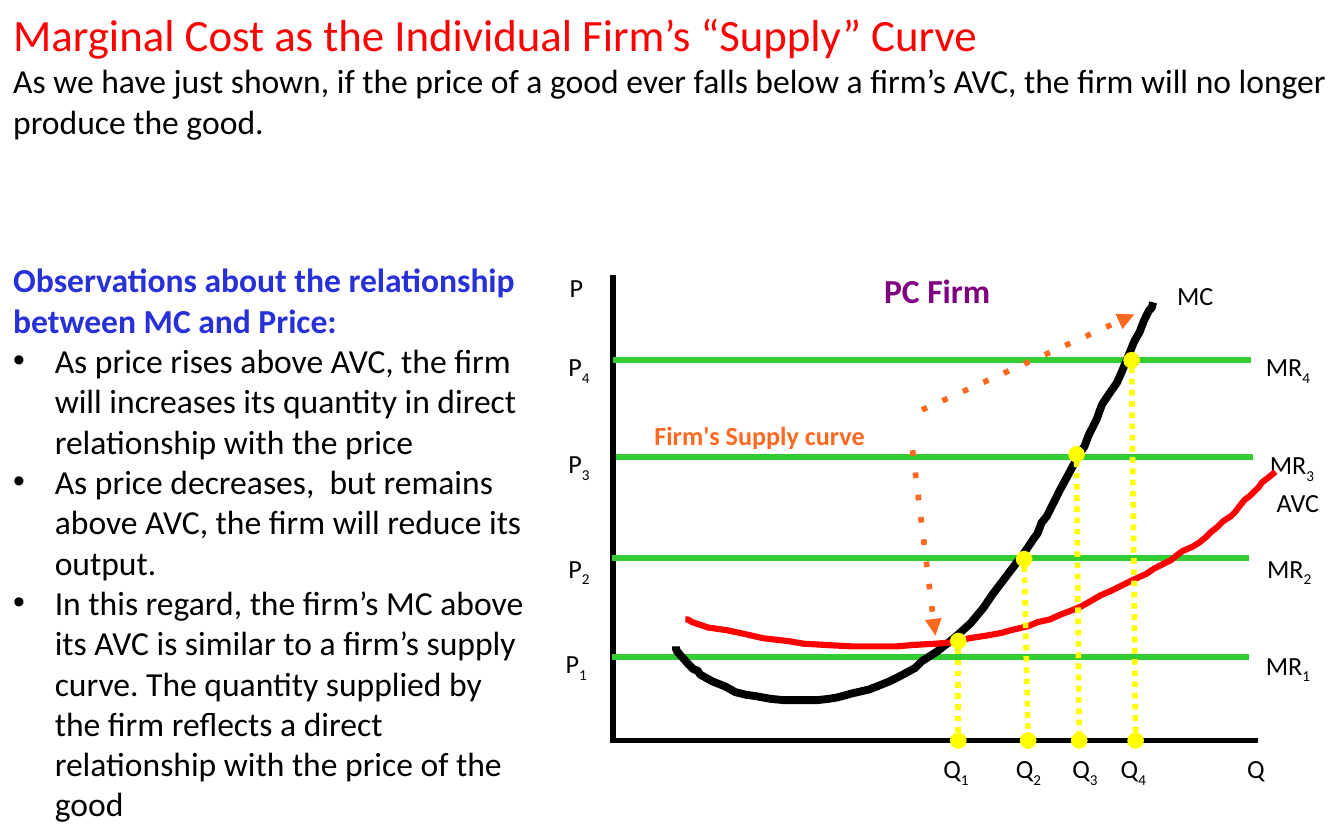
"""Build a slide showing marginal cost as a firm's supply curve."""
from typing import NamedTuple, Optional

from lxml import etree
from pptx import Presentation
from pptx import util as u
from pptx.dml.color import RGBColor
from pptx.enum import shapes, text
from pptx.oxml.ns import qn

BLACK = RGBColor(0x00, 0x00, 0x00)
RED = RGBColor(0xFF, 0x00, 0x00)
BLUE = RGBColor(0x28, 0x30, 0xD8)
PURPLE = RGBColor(0x80, 0x00, 0x80)
GREEN = RGBColor(0x32, 0xCD, 0x32)
ORANGE = RGBColor(0xFF, 0x68, 0x20)
YELLOW = RGBColor(0xFF, 0xFF, 0x00)
AXIS_Y = 5.51
INDENT = 0.31


class Para(NamedTuple):
    content: str
    size: float = 14
    color: RGBColor = BLACK
    bold: bool = False
    bullet: bool = False
    subscript: str = ""


class Label(NamedTuple):
    left: float
    top: float
    width: float
    para: Para


class Stroke(NamedTuple):
    start: tuple[float, float]
    end: tuple[float, float]
    color: RGBColor
    dash: Optional[str] = None
    head: Optional[str] = None
    tail: Optional[str] = None


class Curve(NamedTuple):
    color: RGBColor
    weight: float
    points: list[tuple[float, float]]


TITLE = [
    Para("Marginal Cost as the Individual Firm’s “Supply” Curve", 24, RED),
    Para("As we have just shown, if the price of a good ever falls below a firm’s AVC, "
         "the firm will no longer produce the good.", 18),
]
OBSERVATIONS = [
    Para("Observations about the relationship between MC and Price:", 18, BLUE, True),
    Para("As price rises above AVC, the firm will increases its quantity in direct "
         "relationship with the price", 18, bullet=True),
    Para("As price decreases,  but remains above AVC, the firm will reduce its output.",
         18, bullet=True),
    Para("In this regard, the firm’s MC above its AVC is similar to a firm’s supply curve. "
         "The quantity supplied by the firm reflects a direct relationship with the price "
         "of the good", 18, bullet=True),
]
PRICE_SPOTS = [(4.11, 4.77), (4.13, 4.06), (4.13, 3.28), (4.13, 2.56)]
REVENUE_SPOTS = [(9.32, 4.78), (9.33, 4.06), (9.35, 3.29), (9.32, 2.56)]
QUANTITY_SPOTS = [(left, 5.55) for left in (6.92, 7.46, 7.88, 8.24)]
SERIES = [("P", 0.55, PRICE_SPOTS), ("MR", 0.76, REVENUE_SPOTS), ("Q", 0.58, QUANTITY_SPOTS)]
LABELS = [
    Label(4.14, 1.97, 0.5, Para("P")),
    Label(9.18, 5.55, 0.58, Para("Q")),
    Label(6.48, 1.96, 1.56, Para("PC Firm", 18, PURPLE, True)),
    Label(8.66, 2.03, 0.66, Para("MC")),
    Label(9.4, 3.57, 0.79, Para("AVC")),
    Label(4.77, 3.07, 2.36, Para("Firm's Supply curve", 14, ORANGE, True)),
] + [
    Label(left, top, width, Para(name, subscript=str(number)))
    for name, width, spots in SERIES
    for number, (left, top) in enumerate(spots, 1)
]
AXES = [
    Stroke((4.56, AXIS_Y), (4.56, 2.05), BLACK),
    Stroke((4.54, AXIS_Y), (9.36, AXIS_Y), BLACK),
]
REVENUE_LINES = [
    Stroke((left, y), (right, y), GREEN)
    for left, right, y in [(4.55, 9.29, 4.89), (4.55, 9.29, 4.15),
                           (4.58, 9.32, 3.4), (4.56, 9.31, 2.68)]
]
SUPPLY_ARROWS = [
    Stroke((6.86, 3.05), (8.44, 2.34), ORANGE, "dot", tail="triangle"),
    Stroke((6.79, 3.35), (6.96, 4.73), ORANGE, "dot", tail="triangle"),
]
QUANTITY_DROPS = [
    Stroke((top_x, top_y), (foot_x, AXIS_Y), YELLOW, "sysDot", "oval", "oval")
    for top_x, top_y, foot_x in [(7.13, 4.77, 7.13), (7.62, 4.16, 7.65),
                                 (8.01, 3.38, 8.03), (8.42, 2.68, 8.45)]
]
MARGINAL_COST = Curve(BLACK, 4.23, [
    (5.03, 4.81), (5.03, 4.83), (5.04, 4.85), (5.12, 4.94), (5.16, 4.98), (5.19, 4.99),
    (5.21, 5.02), (5.3, 5.07), (5.4, 5.11), (5.47, 5.15), (5.55, 5.17), (5.62, 5.18),
    (5.73, 5.2), (5.83, 5.21), (6.08, 5.21), (6.17, 5.2), (6.23, 5.19), (6.34, 5.16),
    (6.47, 5.13), (6.52, 5.11), (6.62, 5.07), (6.7, 5.03), (6.81, 4.97), (6.86, 4.92),
    (6.97, 4.85), (7.06, 4.78), (7.12, 4.73), (7.22, 4.64), (7.32, 4.52), (7.38, 4.43),
    (7.57, 4.18), (7.61, 4.13), (7.69, 4.01), (7.72, 3.97), (7.75, 3.89), (7.79, 3.84),
    (7.84, 3.74), (7.89, 3.64), (7.95, 3.53), (8.03, 3.38), (8.07, 3.32), (8.1, 3.24),
    (8.16, 3.12), (8.2, 3.01), (8.26, 2.92), (8.31, 2.85), (8.35, 2.76), (8.44, 2.54),
    (8.48, 2.47), (8.51, 2.39), (8.55, 2.31), (8.57, 2.29), (8.58, 2.25),
])
AVERAGE_VARIABLE_COST = Curve(RED, 3.3, [
    (5.1, 4.61), (5.12, 4.61), (5.15, 4.63), (5.27, 4.67), (5.41, 4.69), (5.55, 4.72),
    (5.68, 4.75), (5.86, 4.77), (5.98, 4.79), (6.15, 4.8), (6.34, 4.81), (6.67, 4.81),
    (6.79, 4.8), (6.96, 4.79), (7.09, 4.78), (7.21, 4.75), (7.34, 4.73), (7.45, 4.71),
    (7.52, 4.69), (7.65, 4.66), (7.72, 4.63), (7.81, 4.61), (7.9, 4.57), (7.98, 4.54),
    (8.05, 4.51), (8.12, 4.47), (8.19, 4.43), (8.26, 4.4), (8.34, 4.36), (8.42, 4.32),
    (8.53, 4.27), (8.59, 4.23), (8.65, 4.2), (8.71, 4.17), (8.76, 4.13), (8.8, 4.1),
    (8.87, 4.07), (8.92, 4.04), (8.97, 4), (9.01, 3.96), (9.06, 3.92), (9.1, 3.88),
    (9.16, 3.84), (9.19, 3.81), (9.22, 3.77), (9.26, 3.72), (9.3, 3.69), (9.33, 3.66),
    (9.37, 3.62), (9.39, 3.59), (9.43, 3.56), (9.49, 3.51),
])


def add_text(page, left: float, top: float, width: float, height: float,
             paras: list[Para]) -> None:
    box = page.shapes.add_textbox(*map(u.Inches, (left, top, width, height)))
    frame = box.text_frame
    frame.word_wrap = True
    frame.auto_size = text.MSO_AUTO_SIZE.SHAPE_TO_FIT_TEXT
    for index, para in enumerate(paras):
        paragraph = frame.add_paragraph() if index else frame.paragraphs[0]
        if para.bullet:
            properties = paragraph._p.get_or_add_pPr()
            properties.set("marL", str(u.Inches(INDENT)))
            properties.set("indent", str(-u.Inches(INDENT)))
            etree.SubElement(properties, qn("a:buFont"), typeface="Arial")
            etree.SubElement(properties, qn("a:buChar"), char="•")
        font = paragraph.font
        font.name, font.size, font.bold = "Calibri", u.Pt(para.size), para.bold
        font.color.rgb = para.color
        paragraph.add_run().text = para.content
        if para.subscript:
            span = paragraph.add_run()
            span.text = para.subscript
            span._r.get_or_add_rPr().set("baseline", "-25000")


def add_stroke(page, stroke: Stroke) -> None:
    ends = map(u.Inches, stroke.start + stroke.end)
    connector = page.shapes.add_connector(shapes.MSO_CONNECTOR.STRAIGHT, *ends)
    connector.line.width = u.Pt(3)
    connector.line.color.rgb = stroke.color
    outline = connector.get_or_add_ln()
    if stroke.dash:
        etree.SubElement(outline, qn("a:prstDash"), val=stroke.dash)
    for tag, kind in (("a:headEnd", stroke.head), ("a:tailEnd", stroke.tail)):
        if kind:
            etree.SubElement(outline, qn(tag), type=kind)
    etree.SubElement(connector._element.spPr, qn("a:effectLst"))


def add_curve(page, curve: Curve) -> None:
    start, *rest = [(u.Inches(x), u.Inches(y)) for x, y in curve.points]
    builder = page.shapes.build_freeform(*start)
    builder.add_line_segments(rest, close=False)
    shape = builder.convert_to_shape()
    shape.shadow.inherit = False
    shape.fill.background()
    shape.line.color.rgb = curve.color
    shape.line.width = u.Pt(curve.weight)


def main() -> None:
    deck = Presentation()
    deck.slide_width, deck.slide_height = u.Inches(10), u.Inches(6.25)
    page = deck.slides.add_slide(deck.slide_layouts[6])
    add_text(page, 0, 0, 10, 1.11, TITLE)
    add_text(page, 0, 1.88, 4, 4.34, OBSERVATIONS)
    for stroke in AXES + REVENUE_LINES:
        add_stroke(page, stroke)
    for label in LABELS:
        height = 0.4 if label.para.size == 18 else 0.34
        add_text(page, label.left, label.top, label.width, height, [label.para])
    for curve in (MARGINAL_COST, AVERAGE_VARIABLE_COST):
        add_curve(page, curve)
    for stroke in SUPPLY_ARROWS + QUANTITY_DROPS:
        add_stroke(page, stroke)
    deck.save("out.pptx")


if __name__ == "__main__":
    main()
